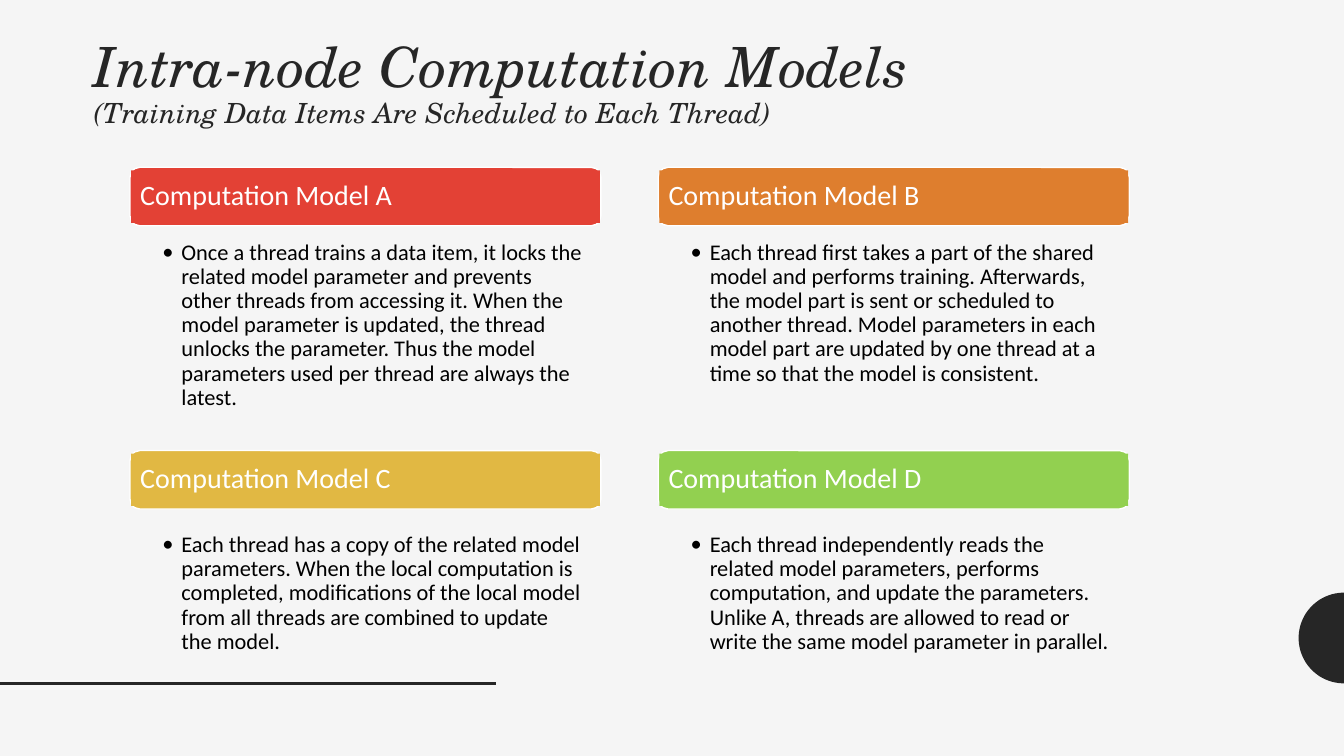
from math import cos, pi, sin
from lxml.etree import SubElement
from pptx import Presentation
from pptx.dml.color import RGBColor
from pptx.enum.shapes import MSO_CONNECTOR, MSO_SHAPE
from pptx.enum.text import MSO_ANCHOR, PP_ALIGN
from pptx.oxml.ns import qn
from pptx.util import Inches, Pt

COLORS = {
    "paper": "F5F5F5", "ink": "262626", "white": "FFFFFF", "black": "000000",
    "A": "E34135", "B": "DE7E2E", "C": "E1B843", "D": "92D050",
}
MODELS = [
    ("A", "Once a thread trains a data item, it locks the related model parameter "
          "and prevents other threads from accessing it. When the model parameter is "
          "updated, the thread unlocks the parameter. Thus the model parameters used "
          "per thread are always the latest."),
    ("B", "Each thread first takes a part of the shared model and performs training. "
          "Afterwards, the model part is sent or scheduled to another thread. Model "
          "parameters in each model part are updated by one thread at a time so that "
          "the model is consistent."),
    ("C", "Each thread has a copy of the related model parameters. When the local "
          "computation is completed, modifications of the local model from all threads "
          "are combined to update the model."),
    ("D", "Each thread independently reads the related model parameters, performs "
          "computation, and update the parameters. Unlike A, threads are allowed to "
          "read or write the same model parameter in parallel."),
]


def color(name):
    return RGBColor.from_string(COLORS[name])


def add_span(para, text, size, tint, font="Calibri", italic=False):
    span = para.add_run()
    span.text = text
    span.font.name = font
    span.font.size = Pt(size)
    span.font.italic = italic
    span.font.color.rgb = color(tint)


deck = Presentation()
deck.slide_width, deck.slide_height = Inches(13.33), Inches(7.5)
page = deck.slides.add_slide(deck.slide_layouts[6])
page.background.fill.solid()
page.background.fill.fore_color.rgb = color("paper")
baseline = Inches(6.78)

# Rule at the lower left
rule = page.shapes.add_connector(MSO_CONNECTOR.STRAIGHT, 0, baseline, Inches(4.92), baseline)
rule.line.color.rgb = color("ink")
rule.line.width = Pt(2)
SubElement(rule._element.spPr, qn("a:effectLst"))

# Title and subtitle
box = page.shapes.add_textbox(Inches(0.83), Inches(0.36), Inches(11.67), Inches(0.95))
box.text_frame.word_wrap = True
box.text_frame.vertical_anchor = MSO_ANCHOR.MIDDLE
para = box.text_frame.paragraphs[0]
para.line_spacing = 0.9
add_span(para, "Intra-node Computation Models", 39.6, "ink", "TeX Gyre Schola", italic=True)
para.add_line_break()
add_span(para, "(Training Data Items Are Scheduled to Each Thread)", 19.8, "ink",
         "TeX Gyre Schola", italic=True)

# Half disc on the right edge
radius = Inches(0.45)
steps = 50
arc = [(deck.slide_width - radius * sin(pi * step / steps),
        baseline - radius + radius * cos(pi * step / steps)) for step in range(steps + 1)]
outline = page.shapes.build_freeform(*arc[0])
outline.add_line_segments(arc[1:], close=True)
disc = outline.convert_to_shape()
disc.shadow.inherit = False
disc.fill.solid()
disc.fill.fore_color.rgb = color("ink")
disc.line.fill.background()

# Two by two grid of models
column_lefts, column_width = (1.29, 6.53), 4.67
bar_tops, body_tops = (1.66, 4.47), (2.36, 5.26)
for index, (letter, description) in enumerate(MODELS):
    row, column = divmod(index, 2)
    left, top = column_lefts[column], bar_tops[row]

    # Outlined bar with a label plate on it
    bar = page.shapes.add_shape(MSO_SHAPE.ROUNDED_RECTANGLE, Inches(left), Inches(top),
                                Inches(column_width), Inches(0.58))
    plate = page.shapes.add_shape(MSO_SHAPE.RECTANGLE, Inches(left + 0.01), Inches(top + 0.03),
                                  Inches(column_width - 0.02), Inches(0.52))
    for shape in (bar, plate):
        shape.shadow.inherit = False
        shape.fill.solid()
        shape.fill.fore_color.rgb = color(letter)
    bar.line.color.rgb = color("white")
    bar.line.width = Pt(1)
    plate.line.fill.background()
    frame = plate.text_frame
    frame.word_wrap = True
    frame.vertical_anchor = MSO_ANCHOR.MIDDLE
    frame.margin_left = frame.margin_right = Inches(0.09)
    frame.margin_top = frame.margin_bottom = Inches(0.09)
    para = frame.paragraphs[0]
    para.alignment = PP_ALIGN.LEFT
    para.line_spacing = 0.9
    add_span(para, f"Computation Model {letter}", 20, "white")

    # Bulleted description
    box = page.shapes.add_textbox(Inches(left), Inches(body_tops[row]),
                                  Inches(column_width), Inches(1.05))
    frame = box.text_frame
    frame.word_wrap = True
    frame.margin_left, frame.margin_right = Inches(0.32), Inches(0.17)
    frame.margin_top = frame.margin_bottom = Inches(0.03)
    para = frame.paragraphs[0]
    para.line_spacing = 0.9
    properties = para._p.get_or_add_pPr()
    properties.set("marL", str(Inches(0.19)))
    properties.set("indent", str(-Inches(0.19)))
    SubElement(properties, qn("a:buFont"), typeface="Calibri")
    SubElement(properties, qn("a:buChar"), char="•")
    add_span(para, description, 16, "black")

deck.save("out.pptx")
